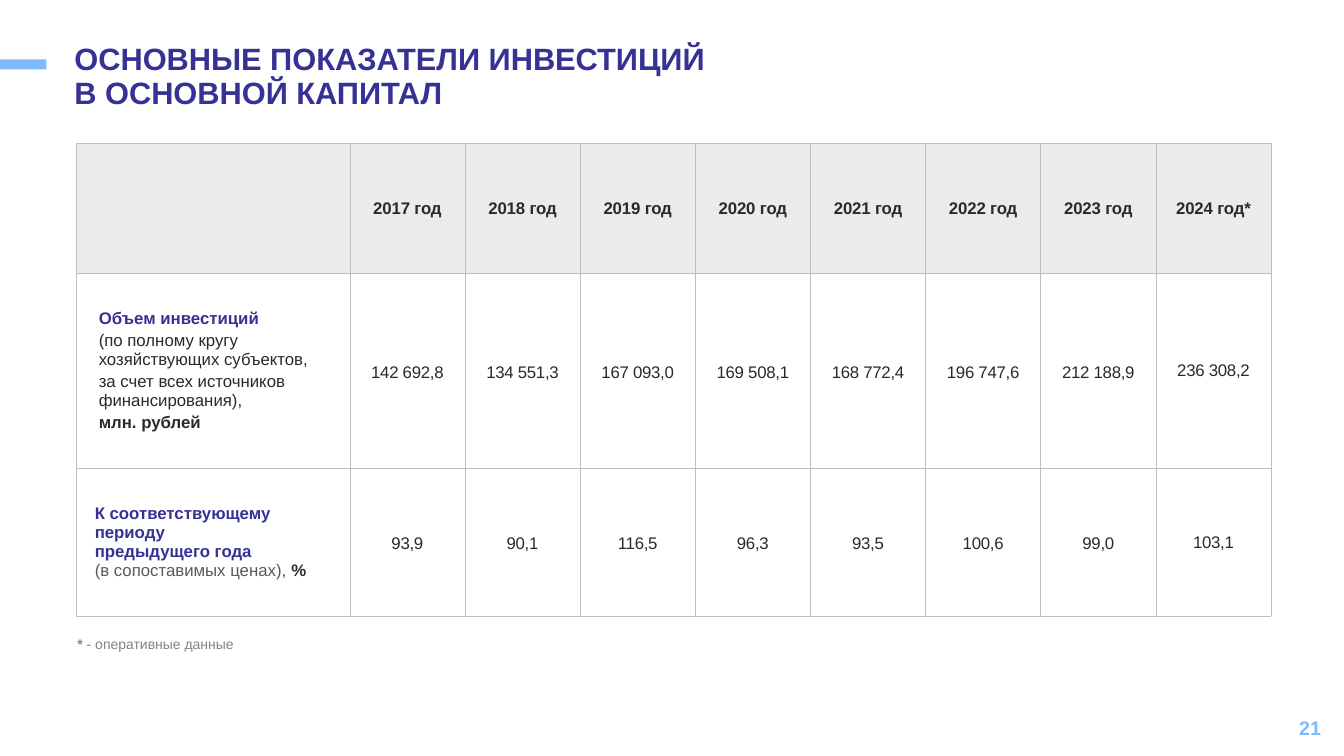
from lxml import etree
from pptx import Presentation
from pptx.dml.color import RGBColor
from pptx.enum import shapes, text
from pptx.oxml import ns
from pptx.util import Inches, Pt

INDIGO = RGBColor(0x36, 0x31, 0x94)
SKY = RGBColor(0x7D, 0xBB, 0xFC)
INK = RGBColor(0x28, 0x2A, 0x2E)
GRAY = RGBColor(0x59, 0x59, 0x59)
NOTE_GRAY = RGBColor(0x83, 0x83, 0x83)
HEADER_FILL = RGBColor(0xEB, 0xEB, 0xEB)
BORDER = RGBColor(0xBF, 0xBF, 0xBF)

YEARS = [f"{year} год" for year in range(2017, 2024)] + ["2024 год*"]
VOLUMES = ["142 692,8", "134 551,3", "167 093,0", "169 508,1",
           "168 772,4", "196 747,6", "212 188,9", "236 308,2"]
RATES = ["93,9", "90,1", "116,5", "96,3", "93,5", "100,6", "99,0", "103,1"]
VOLUME_LABEL = [
    [("Объем инвестиций", INDIGO, True)],
    [("(по полному кругу хозяйствующих субъектов,", INK, False)],
    [("за счет всех источников финансирования),", INK, False)],
    [("млн. рублей", INK, True)],
]
RATE_LABEL = [[
    ("К соответствующему периоду\n", INDIGO, True),
    ("предыдущего года\n", INDIGO, True),
    ("(в сопоставимых ценах), ", GRAY, False),
    ("%", INK, True),
]]


def style(font, size, color, bold):
    """Apply the slide typeface with a size, colour and weight."""
    font.name, font.size, font.bold = "Arial", Pt(size), bold
    font.color.rgb = color


def add_runs(paragraph, runs, size):
    """Fill a paragraph with runs, breaking the line after a trailing newline."""
    if len(runs) == 1:
        words, color, bold = runs[0]
        paragraph.text = words
        style(paragraph.font, size, color, bold)
        return
    paragraph.font.size = Pt(size)
    for words, color, bold in runs:
        run = paragraph.add_run()
        run.text = words.rstrip("\n")
        style(run.font, size, color, bold)
        if words.endswith("\n"):
            paragraph.add_line_break()


def add_text(slide, box, runs, size):
    """Place a one-paragraph text box and return its paragraph."""
    frame = slide.shapes.add_textbox(*map(Inches, box)).text_frame
    frame.word_wrap = True
    add_runs(frame.paragraphs[0], runs, size)
    return frame.paragraphs[0]


def add_heading(slide, left, top, width, height):
    """Draw the accent bar at the slide edge and the title in its box."""
    bar = slide.shapes.add_shape(
        shapes.MSO_SHAPE.RECTANGLE, 0, Inches(top + 0.2), Inches(0.46), Inches(0.1))
    bar.shadow.inherit = False
    bar.fill.solid()
    bar.fill.fore_color.rgb = SKY
    bar.line.fill.background()
    title = add_text(slide, (left, top, width, height),
                     [("ОСНОВНЫЕ ПОКАЗАТЕЛИ ИНВЕСТИЦИЙ В ОСНОВНОЙ КАПИТАЛ", INDIGO, True)], 22)
    title.line_spacing = 0.9


def format_cell(cell, fill=None):
    """Give a cell thin borders, a middle anchor and an optional fill."""
    cell.vertical_anchor = text.MSO_ANCHOR.MIDDLE
    cell.margin_left = cell.margin_right = Inches(0.08)
    properties = cell._tc.get_or_add_tcPr()
    for side in ("a:lnL", "a:lnR", "a:lnT", "a:lnB"):
        border = etree.SubElement(properties, ns.qn(side), w=str(Pt(0.5)))
        solid = etree.SubElement(border, ns.qn("a:solidFill"))
        etree.SubElement(solid, ns.qn("a:srgbClr"), val=str(BORDER))
    if fill is None:
        cell.fill.background()
    else:
        cell.fill.solid()
        cell.fill.fore_color.rgb = fill


def fill_label(cell, paragraphs, indent):
    """Write a row label, indented from the cell edge."""
    cell.margin_left = Inches(0.08 + indent)
    for index, runs in enumerate(paragraphs):
        paragraph = cell.text_frame.paragraphs[0] if index == 0 else cell.text_frame.add_paragraph()
        if index:
            paragraph.space_before = Pt(2.4)
        add_runs(paragraph, runs, 12)


def fill_value(cell, words, bold, tracking):
    """Write a centred year or number with tightened letter spacing."""
    paragraph = cell.text_frame.paragraphs[0]
    paragraph.alignment = text.PP_ALIGN.CENTER
    add_runs(paragraph, [(words, INK, bold)], 12)
    paragraph.runs[0]._r.get_or_add_rPr().set("spc", str(tracking))


def add_investment_table(slide, left, top, width, height):
    """Build the table of investment volumes and rates by year."""
    rows = [YEARS, VOLUMES, RATES]
    table = slide.shapes.add_table(
        len(rows), len(YEARS) + 1, *map(Inches, (left, top, width, height))).table
    table.first_row = table.horz_banding = False
    label_width = 2.71
    for index, column in enumerate(table.columns):
        column.width = Inches((width - label_width) / len(YEARS) if index else label_width)
    for row, share in zip(table.rows, (1.29, 1.94, 1.46)):
        row.height = Inches(height * share / 4.69)
    for row_index, values in enumerate(rows):
        header = row_index == 0
        for column_index in range(len(YEARS) + 1):
            cell = table.cell(row_index, column_index)
            format_cell(cell, HEADER_FILL if header else None)
            if column_index:
                fill_value(cell, values[column_index - 1], header, -10 if header else -20)
                if not header and column_index < len(YEARS):
                    paragraph = cell.text_frame.paragraphs[0]
                    paragraph.line_spacing = 1.15
                    paragraph.space_after = Pt(1)
    fill_label(table.cell(1, 0), VOLUME_LABEL, 0.14)
    fill_label(table.cell(2, 0), RATE_LABEL, 0.1)


def add_footer(slide, left, top, width, height):
    """Place the footnote in its box and the page number in the corner."""
    note = add_text(slide, (left, top, width, height),
                    [("* ", NOTE_GRAY, True), ("- оперативные данные", NOTE_GRAY, False)], 10)
    note.line_spacing = Pt(13)
    number = add_text(slide, (left + 9.53, top + 0.81, 3, 0.4), [("21", SKY, True)], 14)
    number.alignment = text.PP_ALIGN.RIGHT


def main():
    """Build and save the slide."""
    presentation = Presentation()
    presentation.slide_width, presentation.slide_height = Inches(13.33), Inches(7.5)
    slide = presentation.slides.add_slide(presentation.slide_layouts[6])
    add_heading(slide, 0.64, 0.39, 6.74, 0.77)
    add_investment_table(slide, 0.76, 1.42, 11.85, 4.69)
    add_footer(slide, 0.67, 6.24, 6.43, 0.27)
    presentation.save("out.pptx")


if __name__ == "__main__":
    main()
